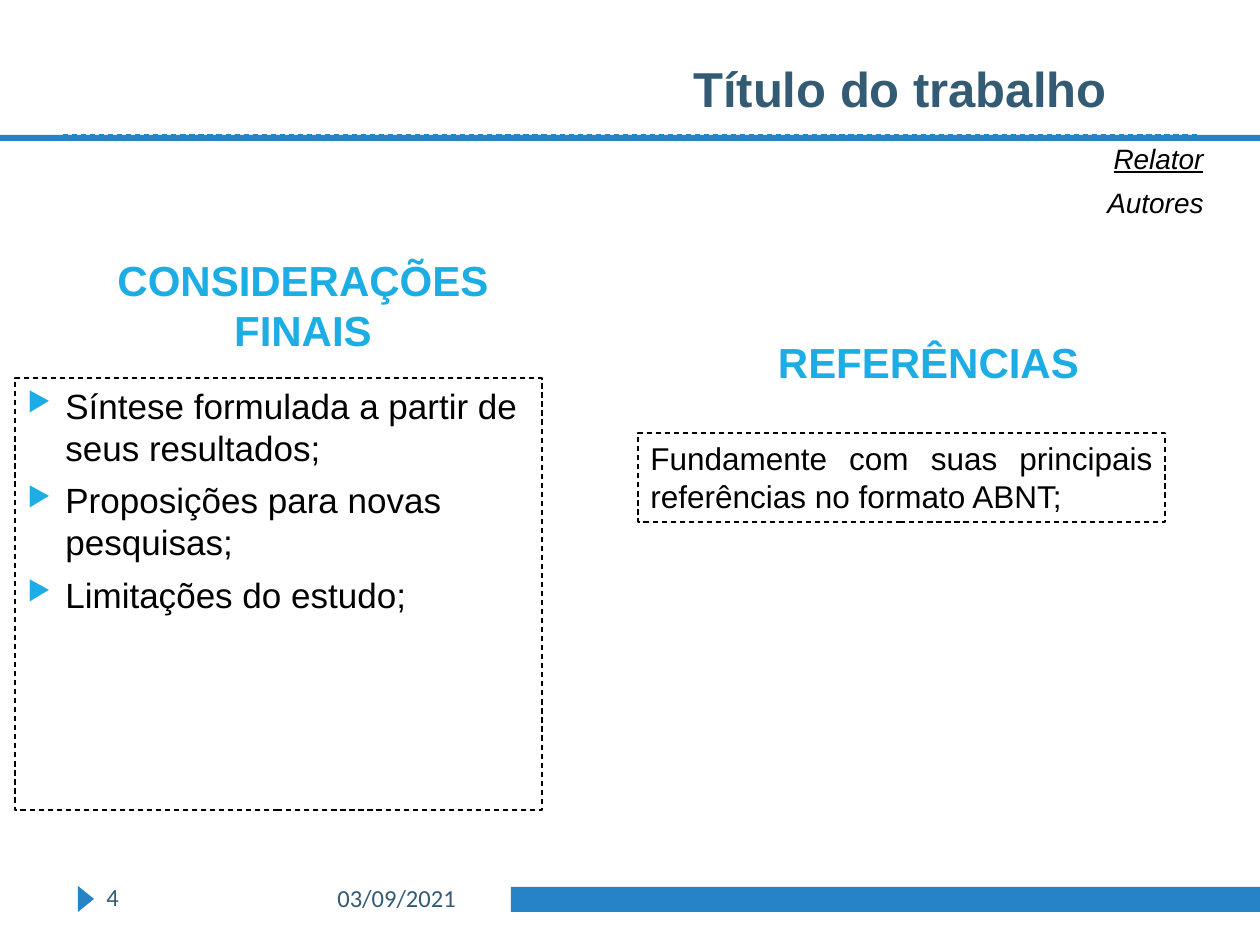
from lxml import etree
from pptx import Presentation
from pptx.dml.color import RGBColor
from pptx.enum.dml import MSO_LINE
from pptx.enum.shapes import MSO_CONNECTOR, MSO_SHAPE
from pptx.enum.text import MSO_ANCHOR, MSO_AUTO_SIZE, PP_ALIGN
from pptx.oxml.ns import qn
from pptx.util import Pt

PX = 914400 / 126
BLACK = RGBColor(0x00, 0x00, 0x00)
BLUE = RGBColor(0x26, 0x83, 0xC6)
CYAN = RGBColor(0x1C, 0xAD, 0xE4)
SLATE = RGBColor(0x33, 0x5B, 0x74)
RECTANGLE = MSO_SHAPE.RECTANGLE
TRIANGLE = MSO_SHAPE.ISOSCELES_TRIANGLE
STRAIGHT = MSO_CONNECTOR.STRAIGHT
DASH = MSO_LINE.DASH
TOP, BOTTOM = MSO_ANCHOR.TOP, MSO_ANCHOR.BOTTOM
FIT_SHAPE = MSO_AUTO_SIZE.SHAPE_TO_FIT_TEXT
LEFT, CENTER = PP_ALIGN.LEFT, PP_ALIGN.CENTER
RIGHT, JUSTIFY = PP_ALIGN.RIGHT, PP_ALIGN.JUSTIFY


def px(*lengths):
    return [round(length * PX) for length in lengths]


def write(shape, lines, size, color, align=LEFT, anchor=TOP, font="Arial", bold=False):
    frame = shape.text_frame
    frame.word_wrap = True
    frame.vertical_anchor = anchor
    frame.text = "\n".join(lines)
    for index, para in enumerate(frame.paragraphs):
        para.alignment = align
        para.space_before = Pt(6 if index else 0)
        for span in para.runs:
            span.font.name = font
            span.font.size = Pt(size)
            span.font.bold = bold
            span.font.color.rgb = color
    return frame


def add_text(page, box, lines, size, color, **style):
    return write(page.shapes.add_textbox(*px(*box)), lines, size, color, **style)


def add_solid(page, kind, box):
    shape = page.shapes.add_shape(kind, *px(*box))
    shape.shadow.inherit = False
    shape.fill.solid()
    shape.fill.fore_color.rgb = BLUE
    shape.line.fill.background()
    return shape


def add_dashed_box(page, box, lines, size, **style):
    shape = page.shapes.add_shape(RECTANGLE, *px(*box))
    shape.shadow.inherit = False
    shape.fill.background()
    shape.line.color.rgb = BLACK
    shape.line.width = Pt(0.75)
    shape.line.dash_style = DASH
    return write(shape, lines, size, BLACK, **style)


def add_bullet(para, indent):
    properties = para._p.get_or_add_pPr()
    properties.set("marL", str(indent))
    properties.set("indent", str(-indent))
    color = etree.SubElement(properties, qn("a:buClr"))
    etree.SubElement(color, qn("a:srgbClr"), val=str(CYAN))
    etree.SubElement(properties, qn("a:buSzPct"), val="76000")
    etree.SubElement(properties, qn("a:buChar"), char="▶")


def add_header(page, left, top, width):
    line = page.shapes.add_connector(
        STRAIGHT, *px(left + 63, top + 135, left + width - 63, top + 135))
    line.line.color.rgb = BLUE
    line.line.width = Pt(0.75)
    line.line.dash_style = DASH
    etree.SubElement(line._element.spPr, qn("a:effectLst"))
    add_solid(page, RECTANGLE, (left, top + 135, width, 6))
    add_text(page, (left + 585, top + 6, 630, 117), ["Título do trabalho"], 28, SLATE,
             align=CENTER, anchor=BOTTOM, bold=True)
    credits = add_text(page, (left + 512, top + 135, 704, 102), ["Relator", "Autores"],
                       16, BLACK, align=RIGHT)
    for para in credits.paragraphs:
        para.runs[0].font.italic = True
    credits.paragraphs[0].runs[0].font.underline = True


def add_conclusions(page, left, top):
    add_text(page, (left + 82, top, 412, 67), ["CONSIDERAÇÕES FINAIS"], 24, CYAN,
             align=CENTER, anchor=BOTTOM, bold=True)
    points = ["Síntese formulada a partir de seus resultados;",
              "Proposições para novas pesquisas;",
              "Limitações do estudo;"]
    frame = add_dashed_box(page, (left, top + 84, 527, 432), points, 20)
    for para in frame.paragraphs:
        add_bullet(para, px(38)[0])


def add_references(page, left, top):
    add_text(page, (left + 113, top, 355, 67), ["REFERÊNCIAS"], 24, CYAN,
             align=CENTER, anchor=BOTTOM, bold=True)
    frame = add_dashed_box(page, (left, top + 107, 527, 89),
                           ["Fundamente com suas principais referências no formato ABNT;"],
                           18, align=JUSTIFY)
    frame.auto_size = FIT_SHAPE


def add_footer(page, left, top, width):
    marker = add_solid(page, TRIANGLE, (left + 73, top + 15, 26, 16))
    marker.rotation = 90
    add_solid(page, RECTANGLE, (left + 511, top + 11, width - 511, 25))
    add_text(page, (left + 325, top + 1, 166, 50), ["03/09/2021"], 14, SLATE, font="Calibri")
    add_text(page, (left + 94, top, 110, 50), ["4"], 14, SLATE, font="Calibri")


def main():
    deck = Presentation()
    deck.slide_width, deck.slide_height = px(1260, 945)
    page = deck.slides.add_slide(deck.slide_layouts[6])
    add_header(page, 0, 0, 1260)
    add_conclusions(page, 15, 294)
    add_references(page, 638, 326)
    add_footer(page, 0, 876, 1260)
    deck.save("out.pptx")


if __name__ == "__main__":
    main()
